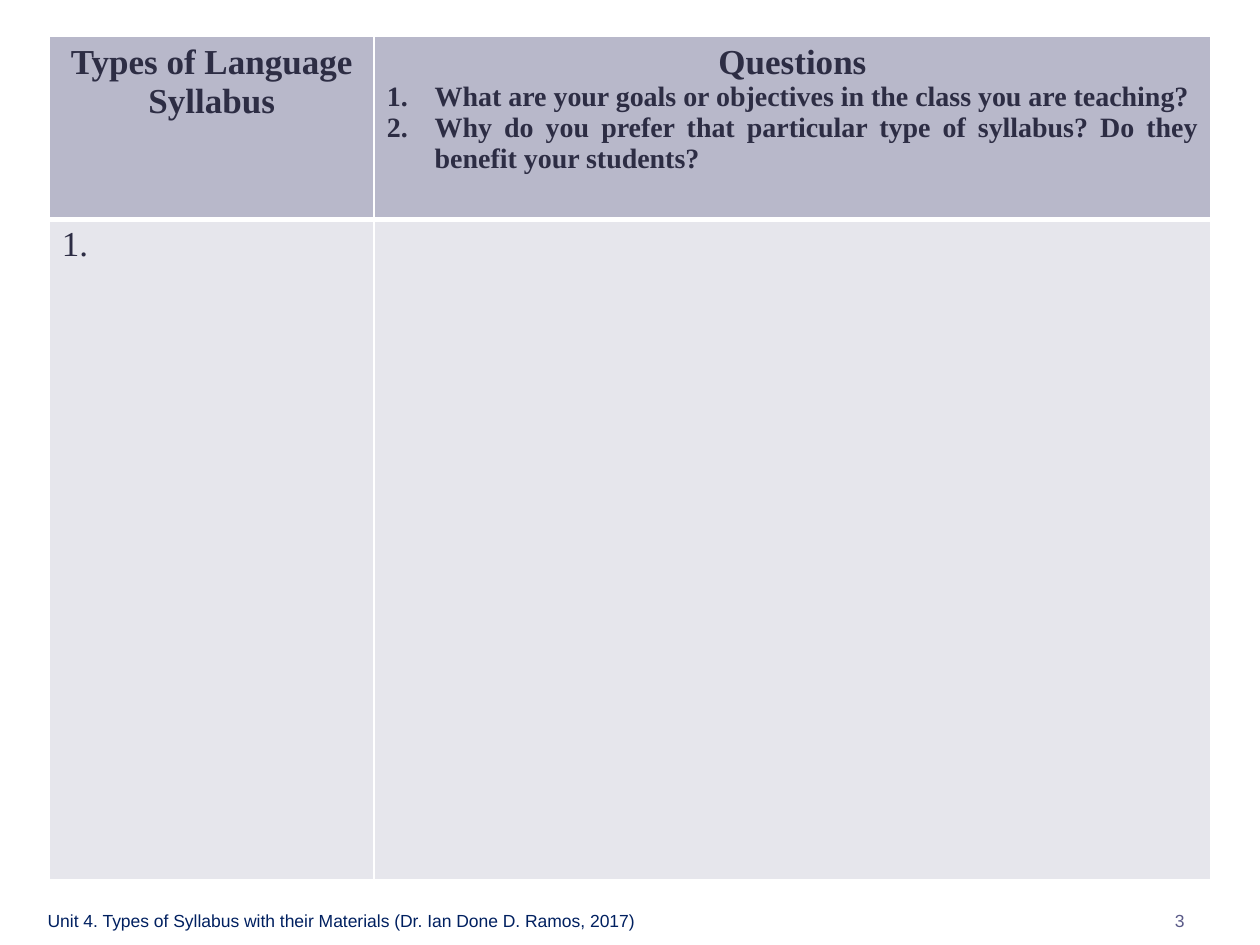
from lxml import etree
from pptx import Presentation
from pptx import util as u
from pptx.dml.color import RGBColor
from pptx.enum import text
from pptx.oxml.ns import qn

HUES = {"ink": "2D2D44", "head": "B8B8CA", "body": "E6E6EC",
        "rule": "FFFFFF", "foot": "002060", "page": "5B5B89"}
SERIF, SANS = "Times New Roman", "Arial"
ALIGN = text.PP_ALIGN
ASKS = ["What are your goals or objectives in the class you are teaching?",
        "Why do you prefer that particular type of syllabus? Do they benefit your students?"]


def hue(name):
    return RGBColor.from_string(HUES[name])


def style(para, face, size, tone, bold=False, align=ALIGN.LEFT):
    para.alignment = align
    font = para.font
    font.name, font.size, font.bold = face, u.Pt(size), bold
    font.color.rgb = hue(tone)


def number(para):
    props = para._p.get_or_add_pPr()
    props.set("marL", str(u.Inches(0.38)))
    props.set("indent", str(-u.Inches(0.38)))
    etree.SubElement(props, qn("a:buFont"), typeface="+mj-lt")
    etree.SubElement(props, qn("a:buAutoNum"), type="arabicPeriod")


def border(cell, **widths):
    props = cell._tc.get_or_add_tcPr()
    for spot, side in enumerate("LRTB"):
        line = etree.Element(qn("a:ln" + side), w=str(u.Pt(widths.get(side, 1))))
        fill = etree.SubElement(line, qn("a:solidFill"))
        etree.SubElement(fill, qn("a:srgbClr"), val=HUES["rule"])
        props.insert(spot, line)


def add_grid(slide, left, top, width, height):
    wide, tall = u.Inches(2.58), u.Inches(1.45)
    grid = slide.shapes.add_table(2, 2, left, top, width, height).table
    grid.columns[0].width, grid.columns[1].width = wide, width - wide
    grid.rows[0].height, grid.rows[1].height = tall, height - tall
    for row, tone, edge in ((0, "head", "B"), (1, "body", "T")):
        for col in range(2):
            cell = grid.cell(row, col)
            cell.fill.solid()
            cell.fill.fore_color.rgb = hue(tone)
            border(cell, **{edge: 3})

    for col, label in enumerate(("Types of Language Syllabus", "Questions")):
        para = grid.cell(0, col).text_frame.paragraphs[0]
        para.text = label
        style(para, SERIF, 20, "ink", True, ALIGN.CENTER)
    for ask in ASKS:
        para = grid.cell(0, 1).text_frame.add_paragraph()
        para.text = ask
        number(para)
        style(para, SERIF, 16, "ink", True, ALIGN.JUSTIFY)
    para = grid.cell(1, 0).text_frame.paragraphs[0]
    para.text = "1."
    style(para, SERIF, 20, "ink")


def add_note(slide, left, top, width, height, words, tone, align):
    frame = slide.shapes.add_textbox(left, top, width, height).text_frame
    frame.word_wrap = True
    frame.vertical_anchor = text.MSO_ANCHOR.BOTTOM
    para = frame.paragraphs[0]
    para.text = words
    style(para, SANS, 10, tone, align=align)


def add_foot(slide, left, top, width, height):
    page = u.Inches(2.33)
    add_note(slide, left, top, u.Inches(7.02), height,
             "Unit 4. Types of Syllabus with their Materials (Dr. Ian Done D. Ramos, 2017)",
             "foot", ALIGN.LEFT)
    add_note(slide, left + width - page, top, page, height, "3", "page", ALIGN.RIGHT)


def main():
    deck = Presentation()
    deck.slide_width, deck.slide_height = u.Inches(10), u.Inches(7.5)
    slide = deck.slides.add_slide(deck.slide_layouts[6])
    add_grid(slide, *map(u.Inches, (0.39, 0.29, 9.22, 6.69)))
    add_foot(slide, *map(u.Inches, (0.28, 6.94, 9.22, 0.5)))
    deck.save("out.pptx")


if __name__ == "__main__":
    main()
